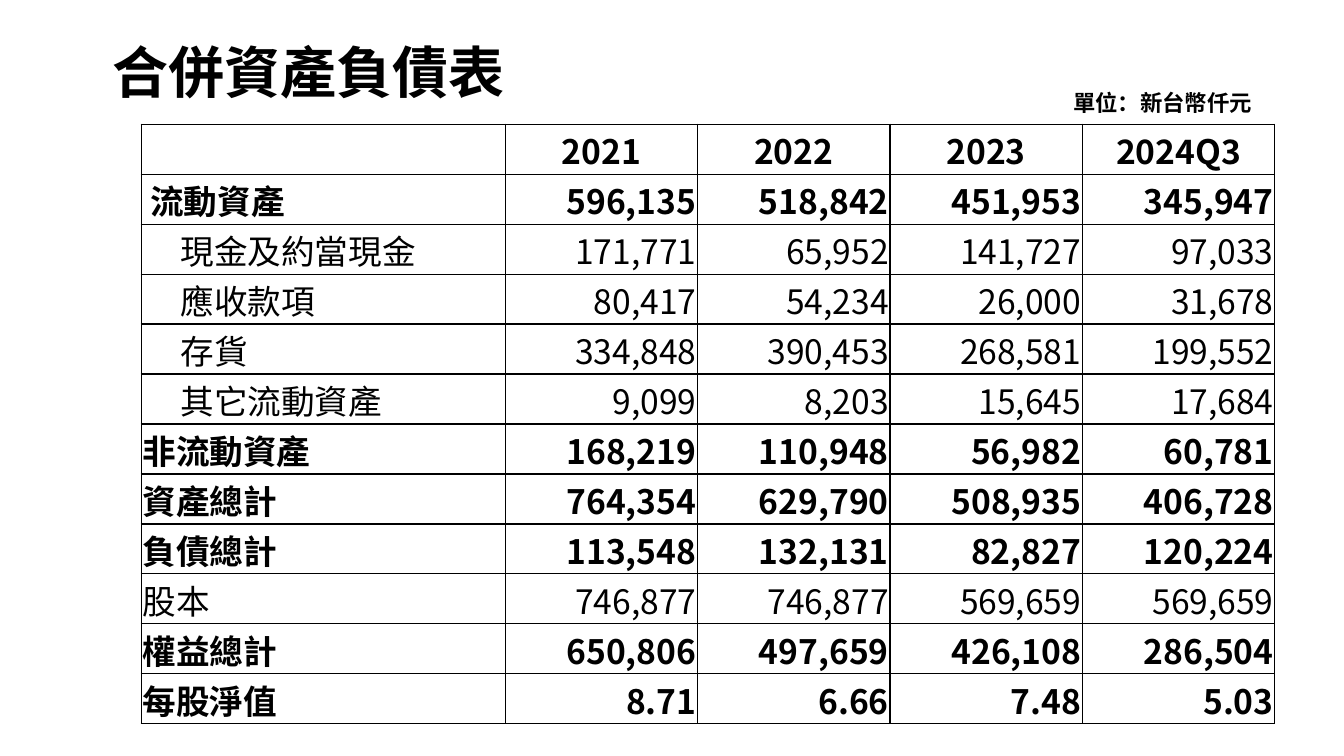
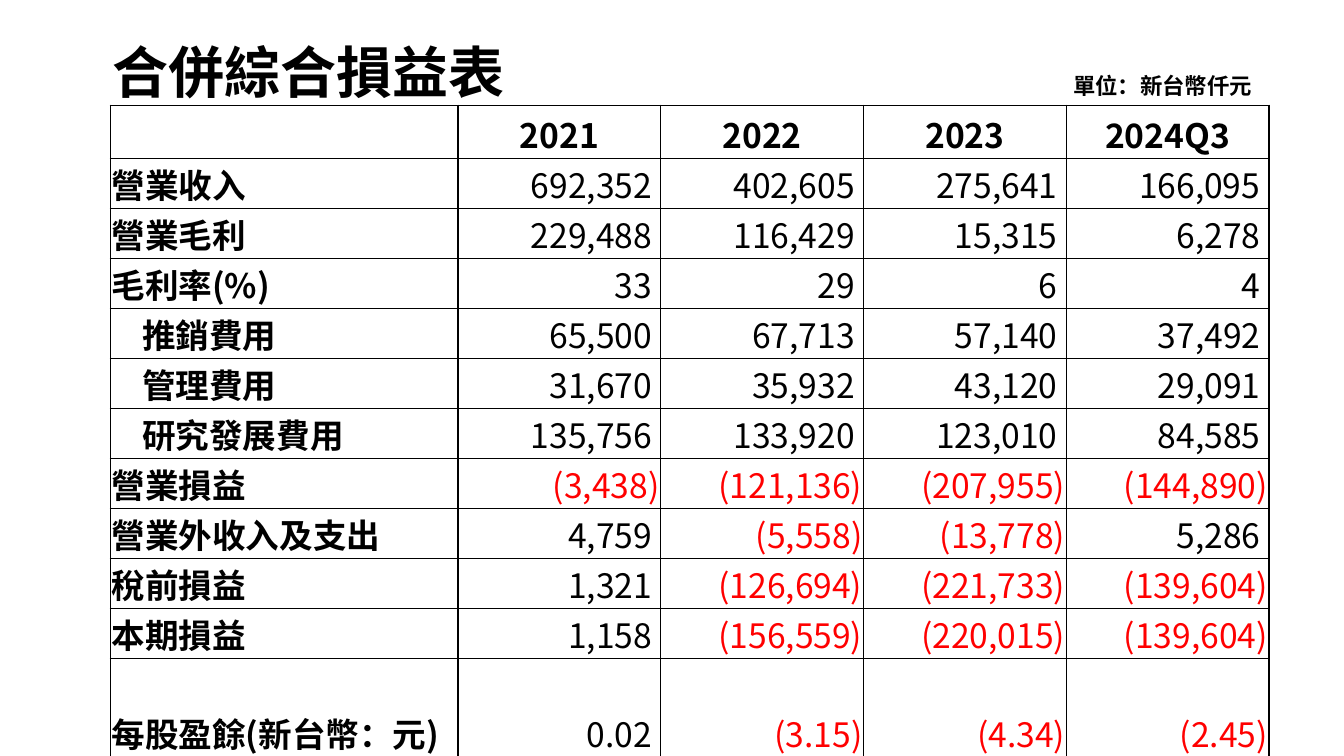
from lxml.etree import SubElement
from pptx import Presentation
from pptx.dml.color import RGBColor
from pptx.enum.text import MSO_ANCHOR, PP_ALIGN
from pptx.oxml.ns import qn
from pptx.util import Cm, Pt

FONT = "Noto Sans CJK SC"
COLORS = {"text": "000000", "negative": "FF0000", "border": "000000"}
PERIODS = ["2021", "2022", "2023", "2024Q3"]
UNIT = "單位：新台幣仟元"
CELL_MARGIN = 0.03

# Each row: label, label indent in cm, bold, values
BALANCE_ROWS = [
    ("流動資產", 0.2, True, ["596,135", "518,842", "451,953", "345,947"]),
    ("現金及約當現金", 0.96, False, ["171,771", "65,952", "141,727", "97,033"]),
    ("應收款項", 0.96, False, ["80,417", "54,234", "26,000", "31,678"]),
    ("存貨", 0.96, False, ["334,848", "390,453", "268,581", "199,552"]),
    ("其它流動資產", 0.96, False, ["9,099", "8,203", "15,645", "17,684"]),
    ("非流動資產", 0, True, ["168,219", "110,948", "56,982", "60,781"]),
    ("資產總計", 0, True, ["764,354", "629,790", "508,935", "406,728"]),
    ("負債總計", 0, True, ["113,548", "132,131", "82,827", "120,224"]),
    ("股本", 0, False, ["746,877", "746,877", "569,659", "569,659"]),
    ("權益總計", 0, True, ["650,806", "497,659", "426,108", "286,504"]),
    ("每股淨值", 0, True, ["8.71", "6.66", "7.48", "5.03"]),
]
INCOME_ROWS = [
    ("營業收入", 0, True, ["692,352", "402,605", "275,641", "166,095"]),
    ("營業毛利", 0, True, ["229,488", "116,429", "15,315", "6,278"]),
    ("毛利率(%)", 0, True, ["33", "29", "6", "4"]),
    ("推銷費用", 0.77, True, ["65,500", "67,713", "57,140", "37,492"]),
    ("管理費用", 0.77, True, ["31,670", "35,932", "43,120", "29,091"]),
    ("研究發展費用", 0.77, True, ["135,756", "133,920", "123,010", "84,585"]),
    ("營業損益", 0, True, ["(3,438)", "(121,136)", "(207,955)", "(144,890)"]),
    ("營業外收入及支出", 0, True, ["4,759", "(5,558)", "(13,778)", "5,286"]),
    ("稅前損益", 0, True, ["1,321", "(126,694)", "(221,733)", "(139,604)"]),
    ("本期損益", 0, True, ["1,158", "(156,559)", "(220,015)", "(139,604)"]),
    ("每股盈餘(新台幣：元)", 0, True, ["0.02", "(3.15)", "(4.34)", "(2.45)"]),
]


def write_text(frame, text, *, size=24, bold=False, color="text",
               align=PP_ALIGN.LEFT, line_spacing=None):
    paragraph = frame.paragraphs[0]
    paragraph.alignment = align
    if line_spacing:
        paragraph.line_spacing = line_spacing
    run = paragraph.add_run()
    run.text = text
    run.font.size = Pt(size)
    run.font.bold = bold
    run.font.color.rgb = RGBColor.from_string(COLORS[color])
    run.font.name = FONT
    SubElement(run.font._element, qn("a:ea"), typeface=FONT)


def add_title(slide, text, left, top, width, height):
    title = slide.shapes.title
    title.left, title.top, title.width, title.height = map(Cm, (left, top, width, height))
    title.text_frame.vertical_anchor = MSO_ANCHOR.MIDDLE
    write_text(title.text_frame, text, size=40, bold=True, line_spacing=0.9)


def add_unit_note(slide, left, top, width=5.13, height=0.94):
    note = slide.shapes.add_textbox(Cm(left), Cm(top), Cm(width), Cm(height))
    note.text_frame.word_wrap = True
    write_text(note.text_frame, UNIT, size=16, bold=True)


def style_cell(cell, anchor, left_indent=0, right_indent=0):
    """Set a cell's anchor, margins, thin border and empty fill."""
    cell.vertical_anchor = anchor
    cell.margin_left = Cm(CELL_MARGIN + left_indent)
    cell.margin_right = Cm(CELL_MARGIN + right_indent)
    cell.margin_top = Cm(CELL_MARGIN)
    cell.margin_bottom = 0
    properties = cell._tc.get_or_add_tcPr()
    for side in ("lnL", "lnR", "lnT", "lnB"):
        line = SubElement(properties, qn(f"a:{side}"), w=str(Pt(1)))
        fill = SubElement(line, qn("a:solidFill"))
        SubElement(fill, qn("a:srgbClr"), val=COLORS["border"])
    cell.fill.background()


def add_statement_table(slide, rows, left, top, label_width, value_width,
                        header_height, row_height, anchor,
                        bold_values, positive_indent):
    """Draw a statement; positive_indent keeps positives clear of the bracket."""
    row_count, column_count = len(rows) + 1, len(PERIODS) + 1
    width = label_width + value_width * len(PERIODS)
    height = header_height + row_height * len(rows)
    table = slide.shapes.add_table(row_count, column_count, Cm(left), Cm(top),
                                   Cm(width), Cm(height)).table
    table.first_row = table.horz_banding = False
    for index, column in enumerate(table.columns):
        column.width = Cm(value_width if index else label_width)
    for index, row in enumerate(table.rows):
        row.height = Cm(row_height if index else header_height)

    style_cell(table.cell(0, 0), anchor)
    for column, period in enumerate(PERIODS, 1):
        cell = table.cell(0, column)
        style_cell(cell, anchor)
        write_text(cell.text_frame, period, bold=True, align=PP_ALIGN.CENTER)
    for row, (label, indent, bold, values) in enumerate(rows, 1):
        cell = table.cell(row, 0)
        style_cell(cell, anchor, left_indent=indent)
        write_text(cell.text_frame, label, bold=bold)
        for column, value in enumerate(values, 1):
            negative = value.startswith("(")
            cell = table.cell(row, column)
            style_cell(cell, anchor, right_indent=0 if negative else positive_indent)
            write_text(cell.text_frame, value, bold=bold and bold_values,
                       color="negative" if negative else "text",
                       align=PP_ALIGN.RIGHT)


def add_statement_slide(presentation, title, note_top, **table_format):
    slide = presentation.slides.add_slide(presentation.slide_layouts[5])
    add_title(slide, title, 2.59, 0.05, 29.21, 3.68)
    add_statement_table(slide, **table_format)
    add_unit_note(slide, 26.8, note_top)


def main():
    presentation = Presentation()
    presentation.slide_width, presentation.slide_height = Cm(33.87), Cm(19.05)
    add_statement_slide(
        presentation, "合併資產負債表", 2.11, rows=BALANCE_ROWS,
        left=3.56, top=3.13, label_width=9.17, value_width=4.85,
        header_height=1.22, row_height=1.22, anchor=MSO_ANCHOR.MIDDLE,
        bold_values=True, positive_indent=0)
    add_statement_slide(
        presentation, "合併綜合損益表", 1.7, rows=INCOME_ROWS,
        left=2.78, top=2.65, label_width=8.76, value_width=5.11,
        header_height=1.35, row_height=1.24, anchor=MSO_ANCHOR.BOTTOM,
        bold_values=False, positive_indent=0.19)
    presentation.save("out.pptx")


if __name__ == "__main__":
    main()
